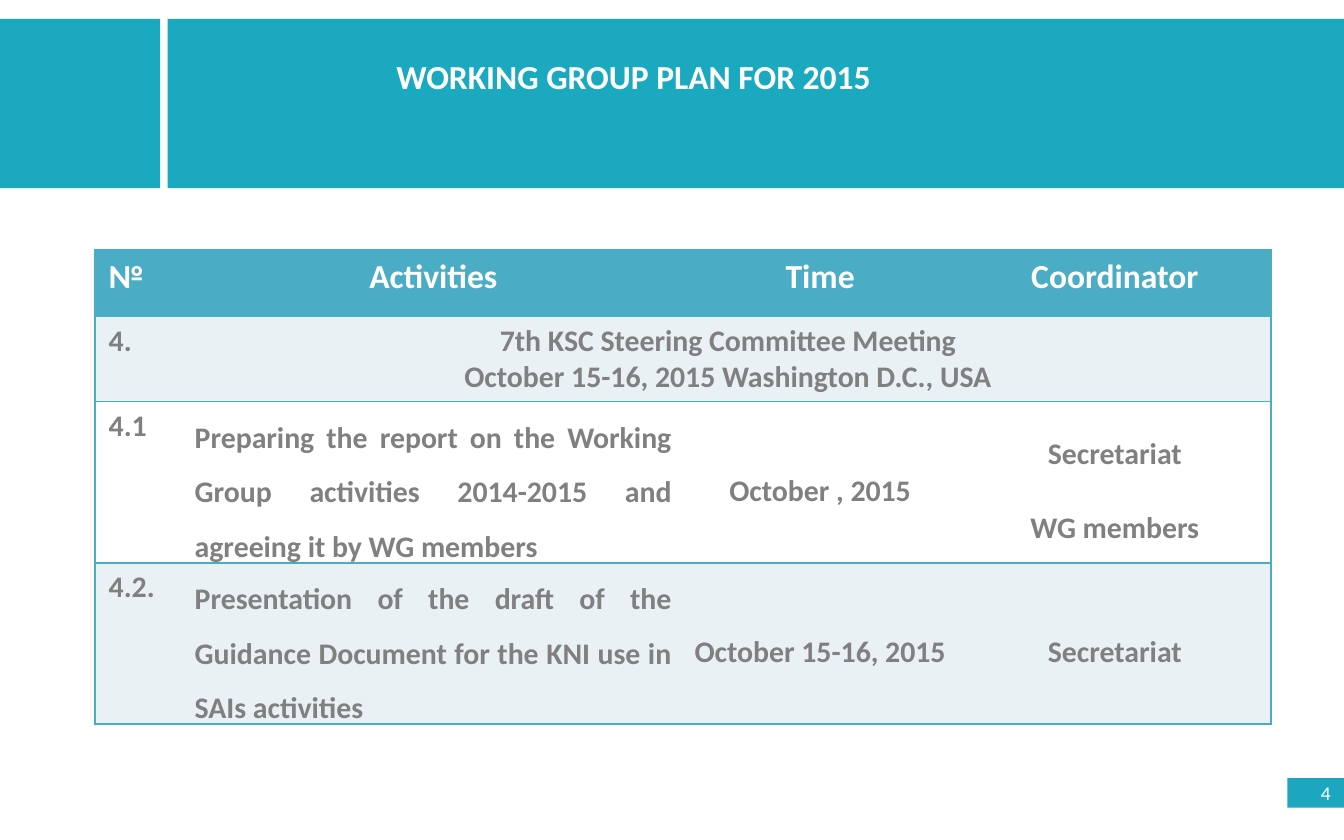
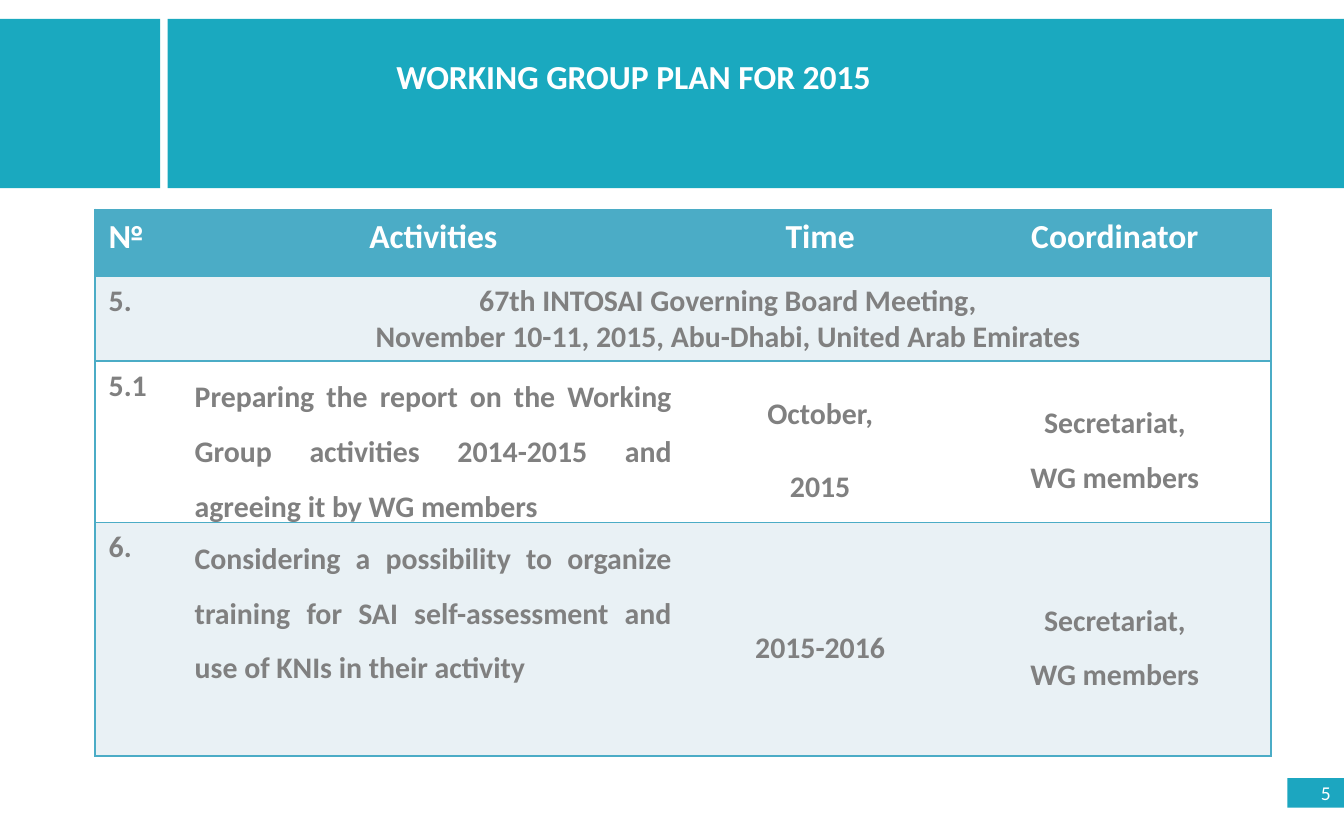
from lxml import etree
from pptx import Presentation
from pptx.dml.color import RGBColor
from pptx.enum.shapes import MSO_SHAPE
from pptx.enum.text import MSO_ANCHOR, MSO_AUTO_SIZE, PP_ALIGN
from pptx.oxml.ns import qn
from pptx.util import Cm, Pt

RECTANGLE = MSO_SHAPE.RECTANGLE
TOP, MIDDLE = MSO_ANCHOR.TOP, MSO_ANCHOR.MIDDLE
LEFT, CENTER, RIGHT, JUSTIFY = PP_ALIGN.LEFT, PP_ALIGN.CENTER, PP_ALIGN.RIGHT, PP_ALIGN.JUSTIFY

WHITE = RGBColor(0xFF, 0xFF, 0xFF)
BAND_TEAL = RGBColor(0x1A, 0xA9, 0xBF)
NUMBER_TEAL = RGBColor(0x1C, 0xA6, 0xC0)
TABLE_BLUE = RGBColor(0x4B, 0xAC, 0xC6)
PALE_BLUE = RGBColor(0xE9, 0xF1, 0xF5)
TEXT_GREY = RGBColor(0x80, 0x80, 0x80)

FONT = "Calibri"
HEADING = {"name": FONT, "size": Pt(18), "bold": True}
BODY = {"name": FONT, "size": Pt(16), "bold": True}
PAGE_NUMBER = {"name": FONT, "size": Pt(10.5), "bold": False}

SLIDE_WIDTH, SLIDE_HEIGHT = Cm(25.4), Cm(15.88)
BAND_BOX = (0, Cm(0.36), SLIDE_WIDTH, Cm(3.2))
NUMBER_BOX = (Cm(24.33), Cm(14.71), Cm(1.07), Cm(0.56))
TABLE_LEFT = Cm(1.8)
COLUMN_WIDTHS = [Cm(1.7), Cm(9.38), Cm(5.24), Cm(5.9)]
HEADER_HEIGHT, MEETING_HEIGHT = Cm(1.26), Cm(1.6)

TITLE = "WORKING GROUP PLAN FOR 2015"
HEADERS = ["№", "Activities", "Time", "Coordinator"]
REPORT = "Preparing the report on the Working Group activities 2014-2015 and agreeing it by WG members"

PLANS = [
    {
        "page": 4,
        "top": Cm(4.72),
        "meeting": ("4.", ["7th KSC Steering Committee Meeting",
                           "October 15-16, 2015 Washington D.C., USA"]),
        "tasks": [
            ("4.1", [REPORT], ["October , 2015"], ["Secretariat", "WG members"]),
            ("4.2.", ["Presentation of the draft of the Guidance Document for the KNI use "
                      "in SAIs activities"],
             ["October 15-16, 2015"], ["Secretariat"]),
        ],
        "task_heights": [Cm(3.05), Cm(3.05)],
        "coordinator_gap": Pt(10),
    },
    {
        "page": 5,
        "top": Cm(3.96),
        "meeting": ("5.", ["67th INTOSAI Governing Board Meeting,",
                           "November 10-11, 2015, Abu-Dhabi, United Arab Emirates"]),
        "tasks": [
            ("5.1", [REPORT], ["October,", "2015"], ["Secretariat,", "WG members"]),
            ("6.", ["Considering a possibility to organize training for SAI self-assessment "
                    "and use of KNIs in their activity"],
             ["2015-2016"], ["Secretariat,", "WG members"]),
        ],
        "task_heights": [Cm(3.05), Cm(4.41)],
        "coordinator_gap": Pt(0),
    },
]


def apply_format(target, values):
    for name, value in values.items():
        setattr(target, name, value)


def write_lines(frame, lines, font, color, **layout):
    """Write one paragraph per line; layout holds paragraph attributes."""
    for index, line in enumerate(lines):
        para = frame.paragraphs[0] if index == 0 else frame.add_paragraph()
        apply_format(para, layout)
        span = para.add_run()
        span.text = line
        apply_format(span.font, font)
        span.font.color.rgb = color


def add_rectangle(page, box, color):
    shape = page.shapes.add_shape(RECTANGLE, *box)
    shape.shadow.inherit = False
    shape.fill.solid()
    shape.fill.fore_color.rgb = color
    shape.line.fill.background()
    return shape


def add_title_band(page, box):
    left, top, width, height = box
    stub_width, title_start = Cm(3.03), Cm(3.17)
    add_rectangle(page, (left + title_start, top, width - title_start, height), BAND_TEAL)
    add_rectangle(page, (left, top, stub_width, height), BAND_TEAL)
    title = page.shapes.add_textbox(left + Cm(7.24), top + Cm(0.58), Cm(9.58), Cm(1.02))
    apply_format(title.text_frame,
                 {"word_wrap": False, "auto_size": MSO_AUTO_SIZE.SHAPE_TO_FIT_TEXT})
    write_lines(title.text_frame, [TITLE], HEADING, WHITE)


def add_page_number(page, box, number):
    frame = add_rectangle(page, box, NUMBER_TEAL).text_frame
    frame.vertical_anchor = MIDDLE
    write_lines(frame, [str(number)], PAGE_NUMBER, WHITE, alignment=RIGHT)


def set_borders(cell, at_left, at_right):
    """Rule the cell above and below, and at the sides that end the table."""
    properties = cell._tc.get_or_add_tcPr()
    sides = {"a:lnL": at_left, "a:lnR": at_right, "a:lnT": True, "a:lnB": True}
    for tag, ruled in sides.items():
        line = etree.SubElement(properties, qn(tag), w=str(Pt(1)))
        fill = etree.SubElement(line, qn("a:solidFill" if ruled else "a:noFill"))
        if ruled:
            etree.SubElement(fill, qn("a:srgbClr"), val=str(TABLE_BLUE))


def style_cells(table):
    fills = [TABLE_BLUE, PALE_BLUE, WHITE, PALE_BLUE]
    last = len(COLUMN_WIDTHS) - 1
    for row, color in zip(table.rows, fills):
        for column, cell in enumerate(row.cells):
            set_borders(cell, column == 0, column == last or cell.is_merge_origin)
            cell.fill.solid()
            cell.fill.fore_color.rgb = color


def fill_task_row(table, row, task, coordinator_gap):
    number, *details = task
    write_lines(table.cell(row, 0).text_frame, [number], BODY, TEXT_GREY)
    styles = [(TOP, JUSTIFY, Pt(10)), (MIDDLE, CENTER, Pt(10)), (MIDDLE, CENTER, coordinator_gap)]
    for column, (lines, (anchor, alignment, gap)) in enumerate(zip(details, styles), start=1):
        cell = table.cell(row, column)
        apply_format(cell, {"vertical_anchor": anchor, "margin_left": Cm(0.18),
                            "margin_right": Cm(0.18), "margin_top": 0, "margin_bottom": 0})
        write_lines(cell.text_frame, lines, BODY, TEXT_GREY,
                    alignment=alignment, line_spacing=1.5, space_after=gap)


def add_plan_table(page, left, top, plan):
    heights = [HEADER_HEIGHT, MEETING_HEIGHT, *plan["task_heights"]]
    table = page.shapes.add_table(len(heights), len(COLUMN_WIDTHS), left, top,
                                  sum(COLUMN_WIDTHS), sum(heights)).table
    table.horz_banding = False
    for column, width in zip(table.columns, COLUMN_WIDTHS):
        column.width = width
    for row, height in zip(table.rows, heights):
        row.height = height
    table.cell(1, 1).merge(table.cell(1, 3))
    style_cells(table)

    for column, header in enumerate(HEADERS):
        write_lines(table.cell(0, column).text_frame, [header], HEADING, WHITE,
                    alignment=CENTER if column else LEFT)
    number, meeting = plan["meeting"]
    write_lines(table.cell(1, 0).text_frame, [number], BODY, TEXT_GREY)
    write_lines(table.cell(1, 1).text_frame, meeting, BODY, TEXT_GREY, alignment=CENTER)
    for row, task in enumerate(plan["tasks"], start=2):
        fill_task_row(table, row, task, plan["coordinator_gap"])


def add_plan_page(deck, plan):
    page = deck.slides.add_slide(deck.slide_layouts[6])
    add_title_band(page, BAND_BOX)
    add_page_number(page, NUMBER_BOX, plan["page"])
    add_plan_table(page, TABLE_LEFT, plan["top"], plan)


def main():
    deck = Presentation()
    apply_format(deck, {"slide_width": SLIDE_WIDTH, "slide_height": SLIDE_HEIGHT})
    for plan in PLANS:
        add_plan_page(deck, plan)
    deck.save("out.pptx")


if __name__ == "__main__":
    main()
